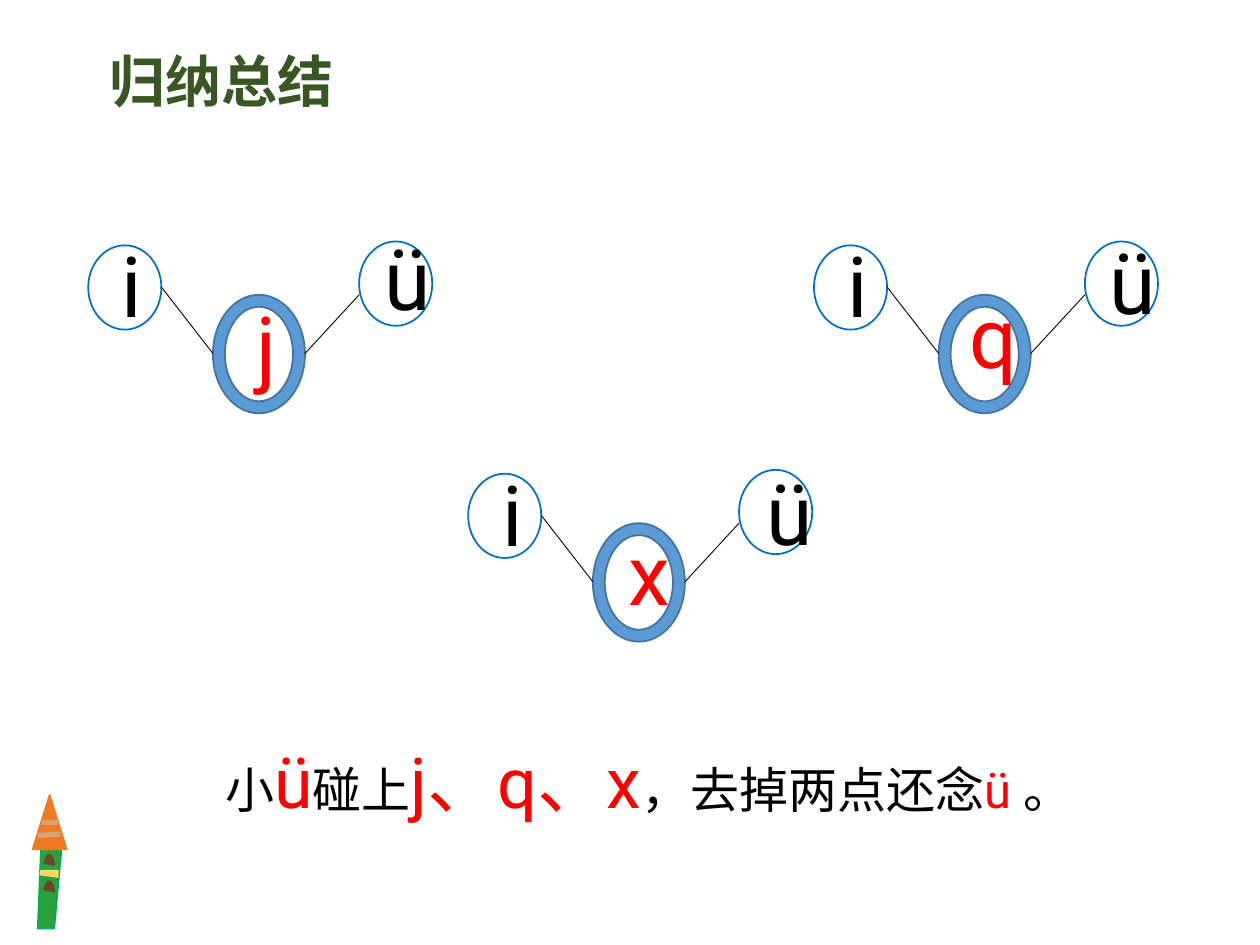
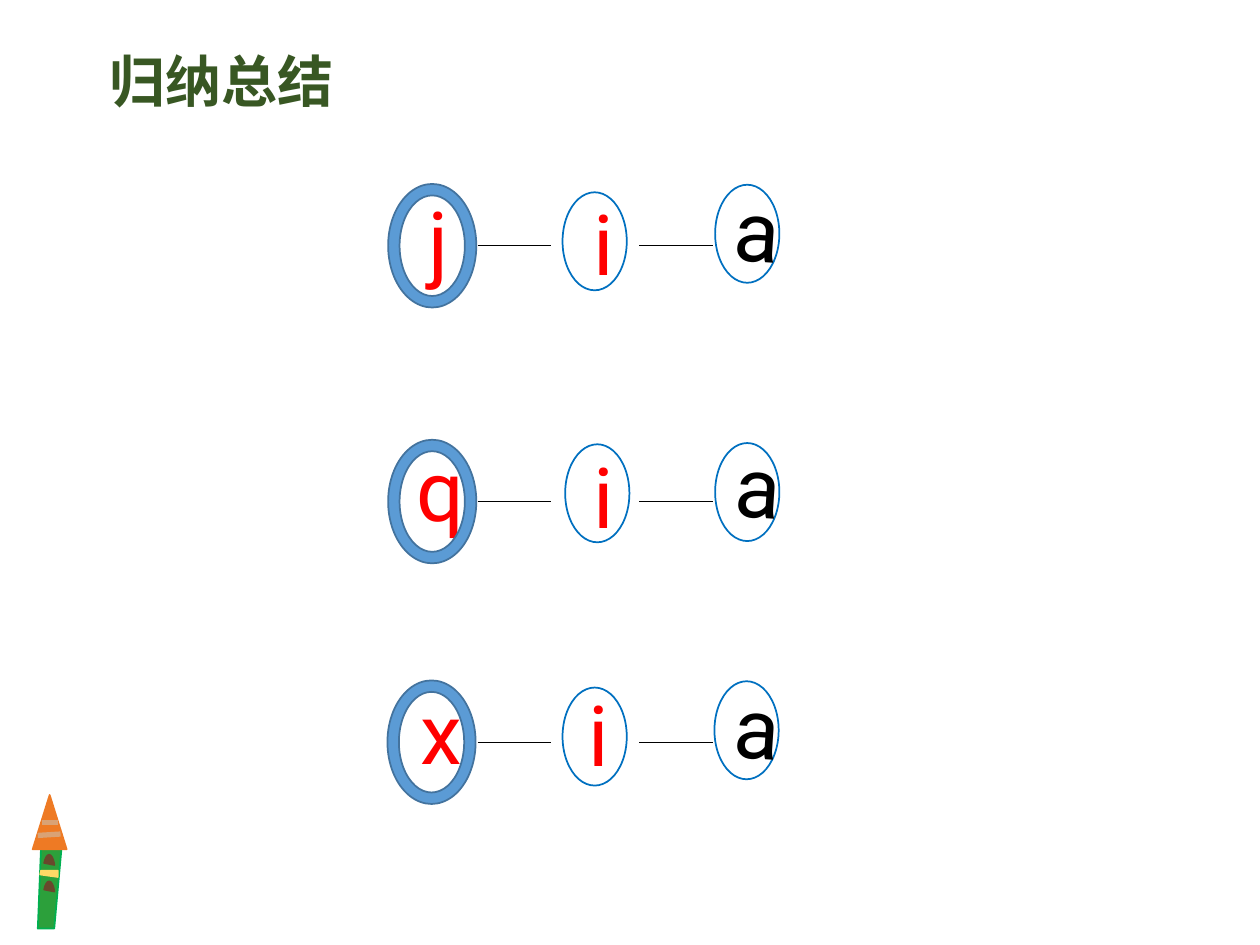
from dataclasses import dataclass

from lxml.etree import SubElement
from pptx import Presentation
from pptx.dml.color import RGBColor
from pptx.enum.shapes import MSO_CONNECTOR as Link, MSO_SHAPE as Preset
from pptx.enum.text import MSO_AUTO_SIZE as Fit, PP_ALIGN as Align
from pptx.oxml.ns import qn
from pptx.util import Pt


@dataclass(frozen=True)
class Theme:
    hanzi: str = "Noto Sans CJK SC"
    pinyin: str = "Roboto"
    heading: str = "385723"
    black: str = "000000"
    red: str = "FF0000"
    white: str = "FFFFFF"
    ring: str = "5B9BD5"
    ring_edge: str = "43739E"
    vowel_edge: str = "0070C0"
    stem: str = "2CA03B"
    stem_edge: str = "00B050"
    tip: str = "EE7A24"
    window: str = "69482C"
    band: str = "FFD966"
    stripe: str = "D9A275"
    heading_size: int = 32
    letter_size: int = 48
    rhyme_size: int = 28
    rhyme_letter_size: int = 40


THEME = Theme()

# Content
HEADING = "归纳总结"
HANZI = dict(font=THEME.hanzi, size=THEME.rhyme_size, color=THEME.black)
PINYIN = dict(font=THEME.pinyin, size=THEME.rhyme_letter_size, color=THEME.red)
RHYME = [
    ("小", HANZI), ("ü", PINYIN), ("碰上", HANZI), ("j、q、x", PINYIN),
    ("，去掉两点还念", HANZI),
    ("ü ", PINYIN | {"size": THEME.rhyme_size}), ("。", HANZI),
]

# Each tree: corner, then every letter with its box offset from that corner
TREES = [
    ((50.4, 138), [("i", 12.2, -8), ("ü", 162, -12.2), ("j", 89.3, 26)]),
    ((267.5, 268.5), [("i", 12.6, -8), ("ü", 163.4, -8.6), ("x", 84.6, 26)]),
    ((465.1, 138), [("i", 12.2, -8), ("ü", 162, -10), ("q", 82, 21)]),
]

# Each syllable: line height, then letter, box offset (left, top), oval centre
SYLLABLES = [
    (140.4, [("j", 237.6, -36, 247, 0), ("i", 331.9, -34.6, 339.8, -2.5),
             ("a", 412.8, -41.8, 427, -6.8)]),
    (286.6, [("q", 231.1, -40.3, 247, 0), ("i", 331.9, -36, 341.3, -4.7),
             ("a", 413.3, -41.8, 427, -5.4)]),
    (424.1, [("x", 233.3, -38.9, 246.6, 0), ("i", 329, -37.4, 339.8, -3.2),
             ("a", 412.8, -41.8, 426.6, -6.8)]),
]

# Pencil in the lower left corner
STEM = [(23.8, 475.9), (35.3, 483.1), (31, 530.6), (21.6, 530.6)]
BAND = [(23.5, 497.5), (33.1, 497.5), (33.1, 501.1), (23, 499.7)]
WINDOW_TOPS = [494.6, 509.8]
STRIPES = [(23.8, 470.2, 33.1, 470.2), (21.6, 477.4, 34.6, 476.6)]


def paint(shape, fill, edge):
    shape.shadow.inherit = False
    shape.fill.solid()
    shape.fill.fore_color.rgb = RGBColor.from_string(fill)
    shape.line.color.rgb = RGBColor.from_string(edge)
    shape.line.width = Pt(1)
    return shape


def preset(slide, kind, left, top, width, height, fill, edge):
    frame = map(Pt, (left, top, width, height))
    return paint(slide.shapes.add_shape(kind, *frame), fill, edge)


def outline(slide, points, fill, edge):
    corners = [(Pt(x), Pt(y)) for x, y in points]
    builder = slide.shapes.build_freeform(*corners[0])
    builder.add_line_segments(corners[1:], close=True)
    paint(builder.convert_to_shape(), fill, edge)


def line(slide, x1, y1, x2, y2, color=THEME.black, weight=0.5):
    link = slide.shapes.add_connector(Link.STRAIGHT, *map(Pt, (x1, y1, x2, y2)))
    link.line.color.rgb = RGBColor.from_string(color)
    link.line.width = Pt(weight)
    SubElement(link._element.spPr, qn("a:effectLst"))


def text_box(slide, left, top, width, height, wrap=True, rotation=0):
    box = slide.shapes.add_textbox(*map(Pt, (left, top, width, height)))
    box.rotation = rotation
    box.text_frame.word_wrap = wrap
    box.text_frame.auto_size = Fit.SHAPE_TO_FIT_TEXT
    return box.text_frame.paragraphs[0]


def write(paragraph, text, *, font=THEME.pinyin, size=THEME.letter_size,
          color=THEME.black, bold=False):
    run = paragraph.add_run()
    run.text = text
    run.font.name = font
    run.font.size = Pt(size)
    run.font.bold = bold
    run.font.color.rgb = RGBColor.from_string(color)
    SubElement(run.font._element, qn("a:ea"), typeface=THEME.hanzi)


def letter(slide, text, left, top, width, color, rotation=0):
    write(text_box(slide, left, top, width, 65.5, rotation=rotation),
          text, color=color)


def consonant_ring(slide, left, top, width, height):
    ring = preset(slide, Preset.DONUT, left, top, width, height,
                  THEME.ring, THEME.ring_edge)
    ring.adjustments[0] = 0.13


def vowel_oval(slide, left, top, width, height):
    preset(slide, Preset.FLOWCHART_CONNECTOR, left, top, width, height,
           THEME.white, THEME.vowel_edge)


def pencil(slide):
    outline(slide, STEM, THEME.stem, THEME.stem_edge)
    preset(slide, Preset.ISOSCELES_TRIANGLE, 18.7, 454.3, 19.4, 31,
           THEME.tip, THEME.tip)
    for top in WINDOW_TOPS:
        window = preset(slide, Preset.CHORD, 18.7, top, 18.7, 6.5,
                        THEME.window, THEME.window)
        window.rotation = 90
        window.adjustments[0], window.adjustments[1] = 89.45, 132.13
    outline(slide, BAND, THEME.band, THEME.band)
    for stripe in STRIPES:
        line(slide, *stripe, color=THEME.stripe, weight=3)


def summary_slide(deck):
    slide = deck.slides.add_slide(deck.slide_layouts[6])
    pencil(slide)
    heading = text_box(slide, 54.7, 23, 144, 46, wrap=False)
    heading.alignment = Align.CENTER
    write(heading, HEADING, font=THEME.hanzi, size=THEME.heading_size,
          color=THEME.heading, bold=True)
    return slide


def tree(slide, corner, letters):
    x, y = corner
    consonant_ring(slide, x + 71.3, y + 30.5, 52.6, 67.7)
    vowel_oval(slide, x, y + 2.2, 41.8, 48.2)
    vowel_oval(slide, x + 154.8, y, 41.8, 48.2)
    line(slide, x + 41.8, y + 26, x + 71.3, y + 64)
    line(slide, x + 123.9, y + 64, x + 154.8, y + 30.5)
    for text, dx, dy in letters:
        color = THEME.black if text in "iü" else THEME.red
        letter(slide, text, x + dx, y + dy, 34, color)


def syllable(slide, y, letters):
    for start in (273, 365.4):
        line(slide, start, y, start + 41.8, y)
    for text, left, top, center_x, center_y in letters:
        place = (slide, text, left, y + top)
        if text in "jqx":
            letter(*place, 28.8, THEME.red)
            consonant_ring(slide, center_x - 25.2, y - 35.3, 50.4, 70.6)
            continue
        vowel_oval(slide, center_x - 18.35, y + center_y - 28, 36.7, 56)
        if text == "a":
            letter(*place, 45.4, THEME.black, rotation=3.8)
        else:
            letter(*place, 50.4, THEME.red)


def main():
    deck = Presentation()
    deck.slide_width, deck.slide_height = Pt(720), Pt(540)

    # Trees and rhyme
    slide = summary_slide(deck)
    for corner, letters in TREES:
        tree(slide, corner, letters)
    rhyme = text_box(slide, 121.7, 418.3, 515.5, 55.4)
    for text, style in RHYME:
        write(rhyme, text, **style)

    # Three-part syllables
    slide = summary_slide(deck)
    for y, letters in SYLLABLES:
        syllable(slide, y, letters)

    deck.save("out.pptx")


if __name__ == "__main__":
    main()
